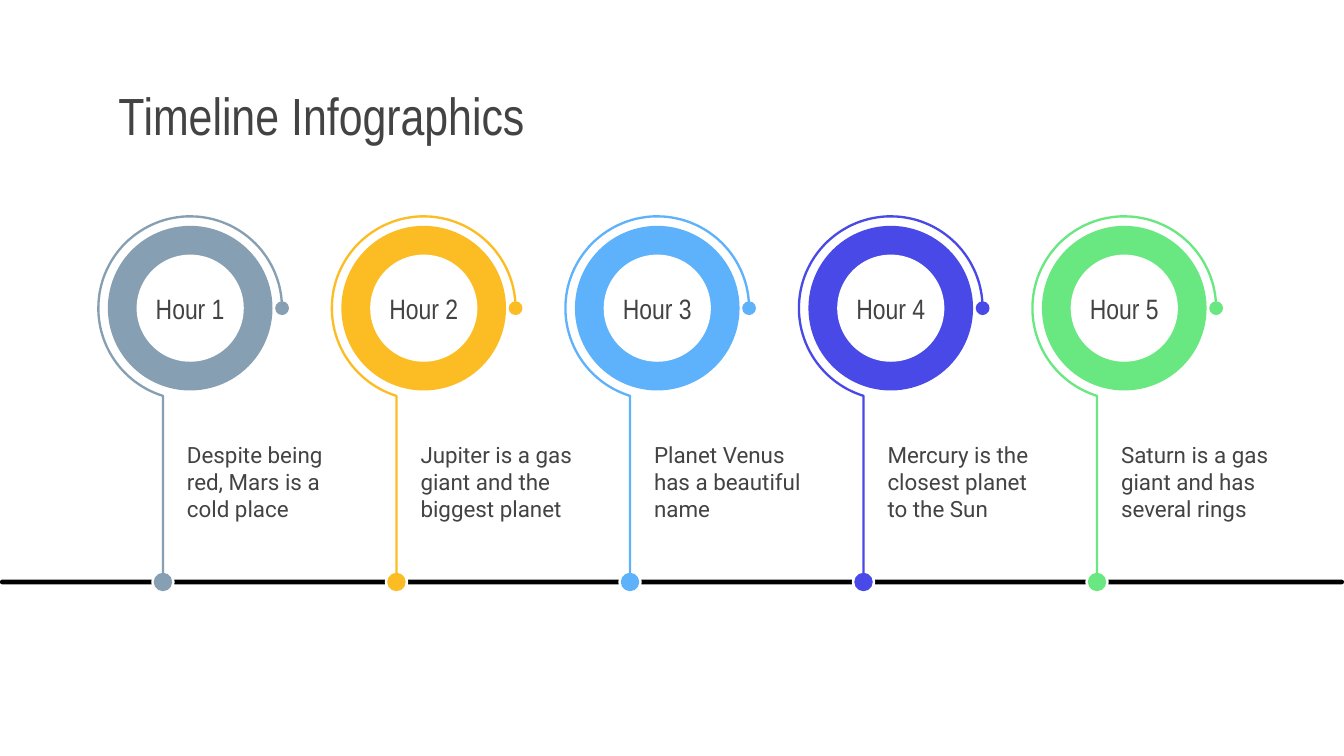
from math import acos, cos, sin, tau

from pptx import Presentation
from pptx.dml.color import RGBColor
from pptx.enum.shapes import MSO_SHAPE
from pptx.enum.text import MSO_ANCHOR, MSO_AUTO_SIZE, PP_ALIGN
from pptx.util import Pt

OVAL, ROUNDED = MSO_SHAPE.OVAL, MSO_SHAPE.ROUNDED_RECTANGLE
MIDDLE, NO_FIT = MSO_ANCHOR.MIDDLE, MSO_AUTO_SIZE.NONE
LEFT, CENTER = PP_ALIGN.LEFT, PP_ALIGN.CENTER

COLORS = {
    "text": "434343", "axis": "000000", "paper": "FFFFFF",
    "slate": "869FB2", "amber": "FCBD24", "sky": "5EB2FC",
    "indigo": "4949E7", "green": "69E781",
}
HEADING_FONT, BODY_FONT = "Arial Narrow", "Roboto"
HOURS = [
    ("Hour 1", "Despite being red, Mars is a cold place", "slate"),
    ("Hour 2", "Jupiter is a gas giant and the biggest planet", "amber"),
    ("Hour 3", "Planet Venus has a beautiful name", "sky"),
    ("Hour 4", "Mercury is the closest planet to the Sun", "indigo"),
    ("Hour 5", "Saturn is a gas giant and has several rings", "green"),
]
FIRST_LEFT, HOUR_TOP, HOUR_PITCH = 52.7, 115.9, 125.1
ORBIT_SIZE, AXIS_Y = 98.4, 311.8
ARC_STEPS = 90


def color(name):
    """Return the named colour."""
    return RGBColor.from_string(COLORS[name])


def write(holder, words, font, size, align, inset=7.2, wrap=True):
    """Put one formatted paragraph into a shape."""
    frame = holder.text_frame
    margins = {f"margin_{side}": Pt(inset) for side in ("left", "top", "right", "bottom")}
    layout = {"word_wrap": wrap, "auto_size": NO_FIT, "vertical_anchor": MIDDLE}
    for name, value in (margins | layout).items():
        setattr(frame, name, value)
    paragraph = frame.paragraphs[0]
    paragraph.text, paragraph.alignment = words, align
    for name, value in {"name": font, "size": Pt(size)}.items():
        setattr(paragraph.font, name, value)
    paragraph.font.color.rgb = color("text")


def add_solid(shapes, preset, left, top, width, height, fill):
    """Add a flat filled shape without outline."""
    solid = shapes.add_shape(preset, Pt(left), Pt(top), Pt(width), Pt(height))
    solid.shadow.inherit = False
    solid.fill.solid()
    solid.fill.fore_color.rgb = color(fill)
    solid.line.fill.background()
    return solid


def add_disc(shapes, x, y, diameter, fill):
    """Add a filled circle around a centre."""
    radius = diameter / 2
    return add_solid(shapes, OVAL, x - radius, y - radius, diameter, diameter, fill)


def add_orbit(shapes, x, y, radius, stem_x, stem_end, hue):
    """Draw an open arc that runs down into a straight stem."""
    sweep = tau - acos((stem_x - x) / radius)
    angles = [sweep * step / ARC_STEPS for step in range(ARC_STEPS + 1)]
    points = [(Pt(x + radius * cos(a)), Pt(y - radius * sin(a))) for a in angles]
    points.append((Pt(stem_x), Pt(stem_end)))
    builder = shapes.build_freeform(*points[0])
    builder.add_line_segments(points[1:], close=False)
    orbit = builder.convert_to_shape()
    orbit.shadow.inherit = False
    orbit.fill.background()
    orbit.line.color.rgb = color(hue)
    orbit.line.width = Pt(1.25)


def add_hour(slide, left, top, size, axis_y, hour, fact, hue):
    """Build one milestone: orbit, ring, label, fact and axis marker."""
    shapes = slide.shapes.add_group_shape().shapes
    radius = size / 2
    x, y, stem_x = left + radius, top + radius, left + 34.6
    for dot_x, dot_y, halo, dot in ((left + size, y, 9.4, 7.4), (stem_x, axis_y, 12.5, 9.9)):
        add_disc(shapes, dot_x, dot_y, halo, "paper")
        add_disc(shapes, dot_x, dot_y, dot, hue)
    add_orbit(shapes, x, y, radius, stem_x, axis_y, hue)
    add_disc(shapes, x, y, 88.2, hue)
    label = add_disc(shapes, x, y, 57.4, "paper")
    write(label, hour, HEADING_FONT, 15, CENTER, inset=0, wrap=False)
    note = shapes.add_textbox(Pt(left + 40.4), Pt(top + 114.5), Pt(97.9), Pt(55.4))
    write(note, fact, BODY_FONT, 12, LEFT)


def add_title(slide, left, top, width, height):
    """Place and format the title placeholder."""
    title = slide.shapes.title
    box = {"left": left, "top": top, "width": width, "height": height}
    for name, value in box.items():
        setattr(title, name, Pt(value))
    write(title, "Timeline Infographics", HEADING_FONT, 28, LEFT)


def add_axis(slide, left, y, width, thickness):
    """Draw the round-ended timeline axis."""
    axis = add_solid(slide.shapes, ROUNDED, left, y - thickness / 2, width, thickness, "axis")
    axis.adjustments[0] = 0.5


def main():
    """Build and save the timeline slide."""
    deck = Presentation()
    deck.slide_width, deck.slide_height = Pt(720), Pt(405)
    slide = deck.slides.add_slide(deck.slide_layouts[5])
    add_title(slide, 56.2, 42.5, 608.4, 38.2)
    add_axis(slide, 0, AXIS_Y, 720, 2.5)
    for index, hour in enumerate(HOURS):
        add_hour(slide, FIRST_LEFT + index * HOUR_PITCH, HOUR_TOP, ORBIT_SIZE, AXIS_Y, *hour)
    deck.save("out.pptx")


if __name__ == "__main__":
    main()
